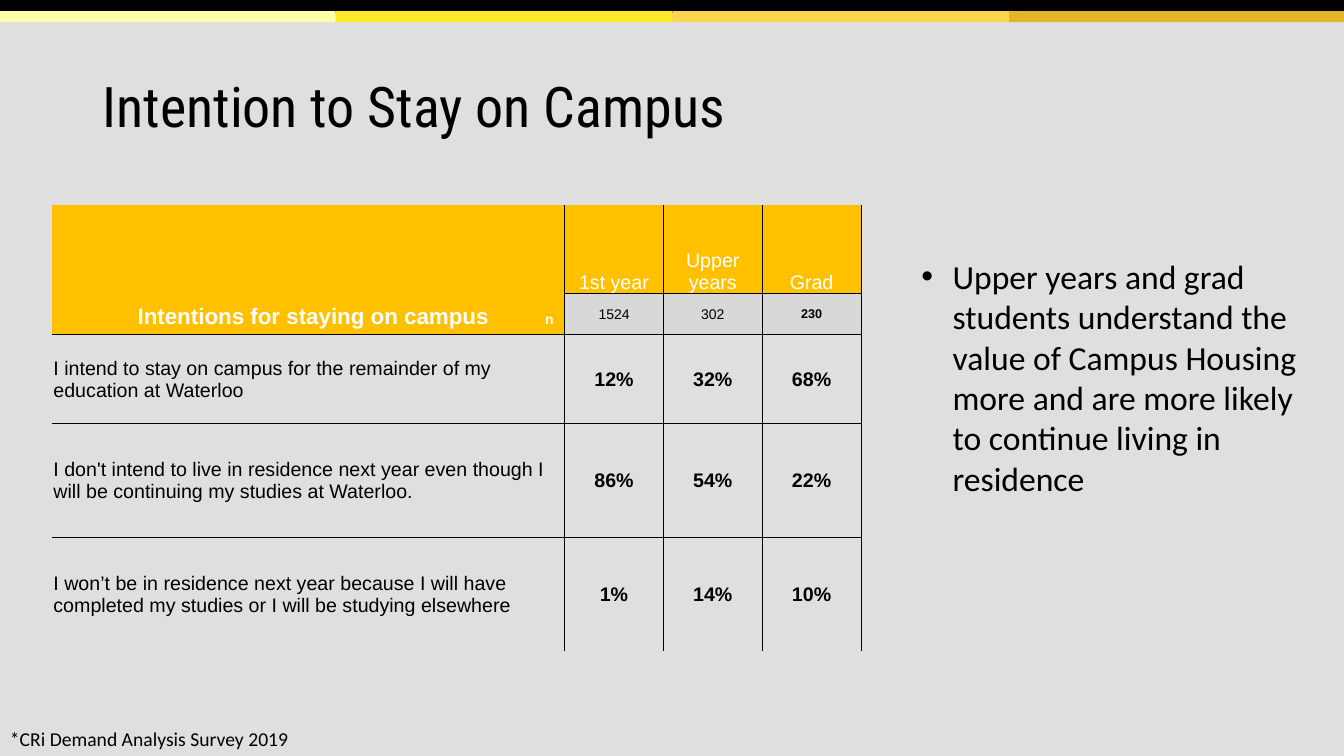
from lxml.etree import SubElement as Sub
from pptx import Presentation as Deck
from pptx.dml.color import RGBColor as Rgb
from pptx.enum.text import MSO_ANCHOR as Anchor, PP_ALIGN as Align
from pptx.oxml import parse_xml
from pptx.oxml.ns import nsdecls, qn
from pptx.util import Pt

PX = 9144


def color(hue):
    return Rgb.from_string(hue)


def style(para, face, size, hue, bold=False):
    font = para.font
    font.name, font.size, font.bold = face, Pt(size), bold
    font.color.rgb = color(hue)


deck = Deck()
deck.slide_width, deck.slide_height = 1333 * PX, 750 * PX
slide = deck.slides.add_slide(deck.slide_layouts[6])
back = slide.background.fill
back.solid()
back.fore_color.rgb = color("DFDFDF")

bars = [(-1, 0, 1335, 13, "000000")]
for i, hue in enumerate(["FFFFAA", "FFEA29", "FFD54F", "E4B429"]):
    bars.append((334 * i - 1, 11, 334, 11, hue))
for left, top, width, height, hue in bars:
    bar = slide.shapes.add_shape(1, left * PX, top * PX, width * PX, height * PX)
    bar.shadow.inherit = False
    bar.fill.solid()
    bar.fill.fore_color.rgb = color(hue)
    bar.line.fill.background()

texts = [
    ("Intention to Stay on Campus", 92, 79, 1150, 60, "Roboto Condensed", 40),
    ("*CRi Demand Analysis Survey 2019", 0, 716, 415, 34, "Calibri", 14),
    ("Upper years and grad students understand the value of Campus Housing "
     "more and are more likely to continue living in residence",
     904, 249, 392, 252, "Calibri", 24),
]
paras = []
for words, left, top, width, height, face, size in texts:
    box = slide.shapes.add_textbox(left * PX, top * PX, width * PX, height * PX)
    frame = box.text_frame
    frame.word_wrap = True
    frame.vertical_anchor = Anchor.MIDDLE if size == 40 else Anchor.TOP
    para = frame.paragraphs[0]
    para.text = words
    paras.append(para)
    if size == 24:
        props = para._p.get_or_add_pPr()
        props.set("marL", str(31 * PX))
        props.set("indent", str(-31 * PX))
        Sub(props, qn("a:buFont"), typeface="Arial")
        Sub(props, qn("a:buChar"), char="•")
    style(para, face, size, "000000")
paras[0].line_spacing = 0.9

rows = [
    ("", "1st year", "Upper years", "Grad"),
    ("", "1524", "302", "230"),
    ("I intend to stay on campus for the remainder of my education at Waterloo",
     "12%", "32%", "68%"),
    ("I don't intend to live in residence next year even though I will be "
     "continuing my studies at Waterloo.", "86%", "54%", "22%"),
    ("I won’t be in residence next year because I will have completed my "
     "studies or I will be studying elsewhere", "1%", "14%", "10%"),
]
widths = [508, 98, 98, 98]
heights = [88, 41, 88, 113, 113]
table = slide.shapes.add_table(
    5, 4, 52 * PX, 203 * PX, sum(widths) * PX, sum(heights) * PX).table
table.horz_banding = table.first_row = False
for col, width in zip(table.columns, widths):
    col.width = width * PX
for row, height in zip(table.rows, heights):
    row.height = height * PX
table.cell(0, 0).merge(table.cell(1, 0))

for r, row in enumerate(rows):
    for c, words in enumerate(row):
        cell = table.cell(r, c)
        cell.vertical_anchor = Anchor.BOTTOM if r == 0 else Anchor.MIDDLE
        if c or r > 1:
            cell.margin_left = cell.margin_right = cell.margin_top = PX
            cell.margin_bottom = 0
        if r == 0 or r == 1:
            cell.fill.solid()
            gold = r == 0 or c == 0
            cell.fill.fore_color.rgb = color("FFC000" if gold else "D8D8D8")
        else:
            cell.fill.background()
        edges = [("L", c > 0), ("R", True), ("T", r > 0), ("B", r < 4)]
        for i, (side, shown) in enumerate(edges):
            paint = ('<a:solidFill><a:srgbClr val="000000"/></a:solidFill>'
                     if shown else "<a:noFill/>")
            line = parse_xml(
                f'<a:ln{side} {nsdecls("a")} w="3175">{paint}</a:ln{side}>')
            cell._tc.get_or_add_tcPr().insert(i, line)
        if not words:
            continue
        para = cell.text_frame.paragraphs[0]
        para.text = words
        para.alignment = Align.CENTER if c else Align.LEFT
        last = r == 1 and c == 3
        size = 9 if last else 10 if r == 1 else 14
        bold = last or (r > 1 and c > 0)
        style(para, "Arial", size, "000000" if r else "FFFFFF", bold)

head = table.cell(0, 0).text_frame.paragraphs[0]
tabs = Sub(head._p.get_or_add_pPr(), qn("a:tabLst"))
for stop in (423, 487):
    Sub(tabs, qn("a:tab"), pos=str(stop * PX), algn="r")
style(head, "Arial", 16, "FFFFFF", True)
head.add_run().text = "\tIntentions for staying on campus"
mark = head.add_run()
mark.text = "\tn"
mark.font.size = Pt(10)

deck.save("out.pptx")
